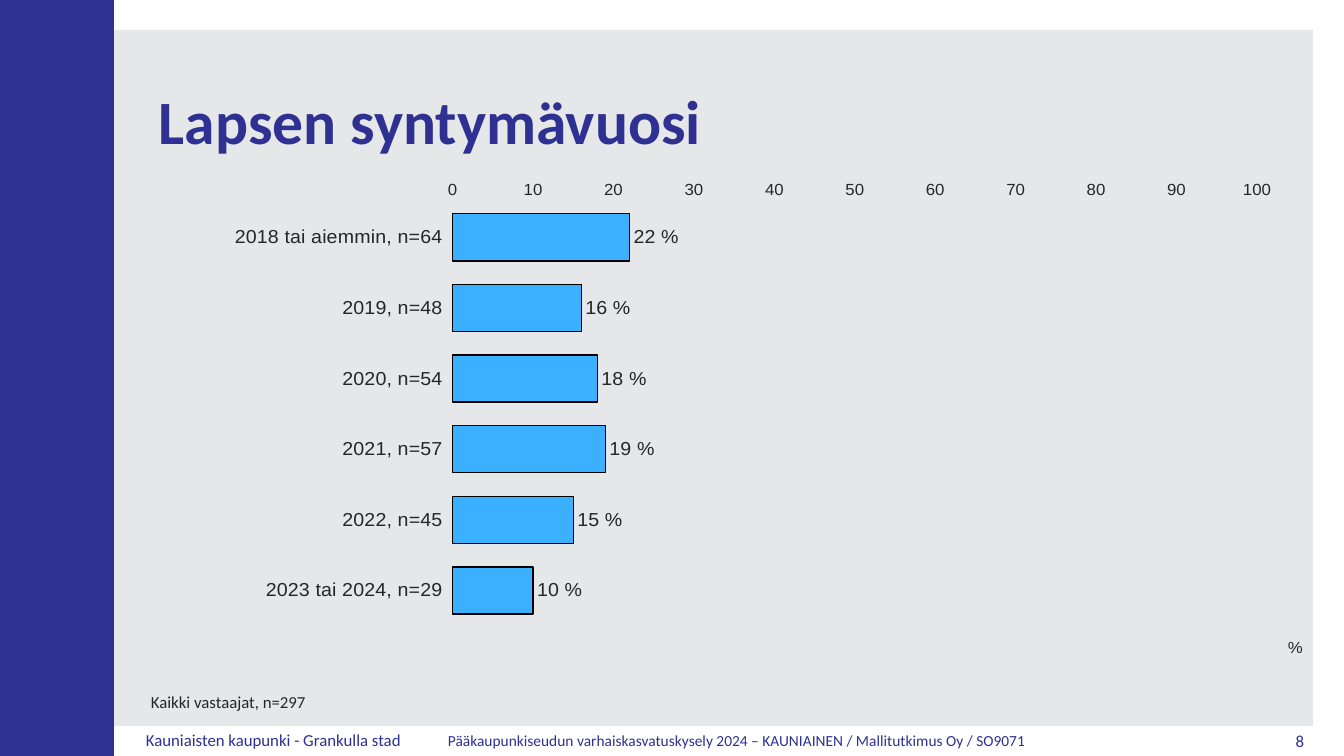
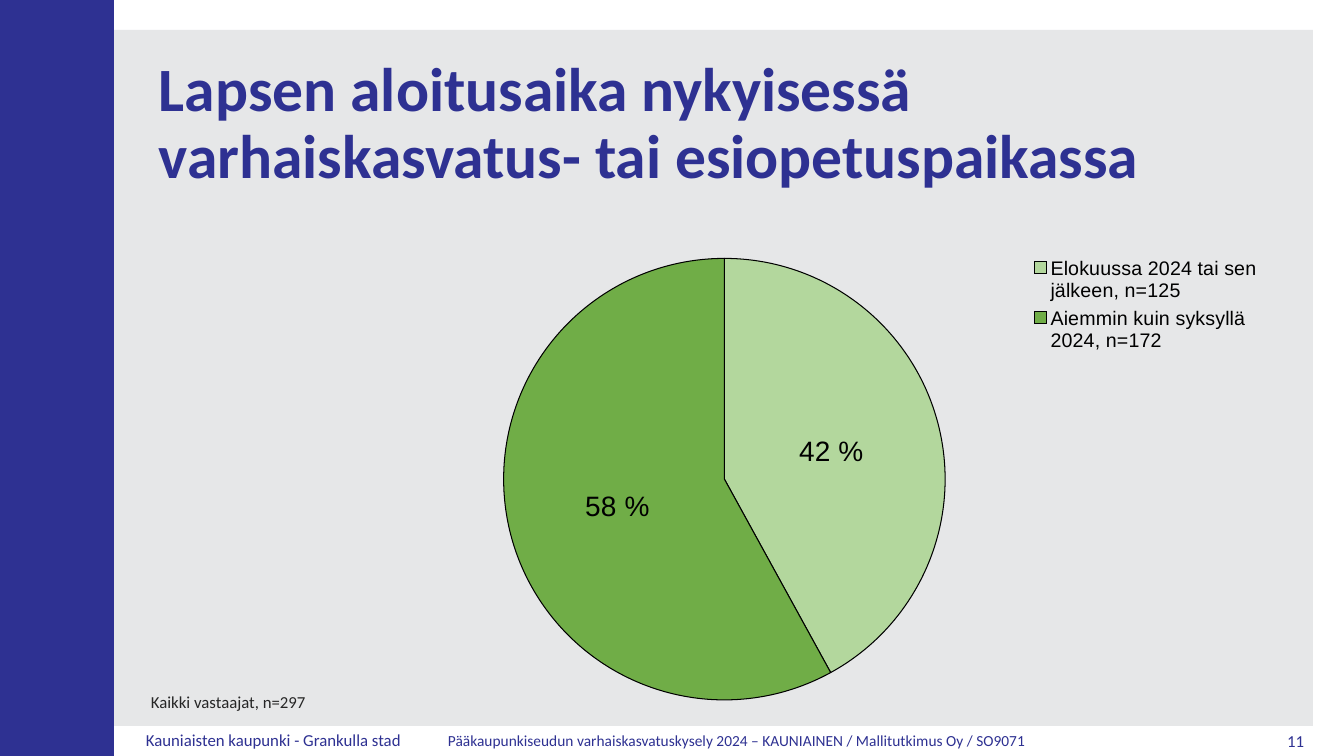
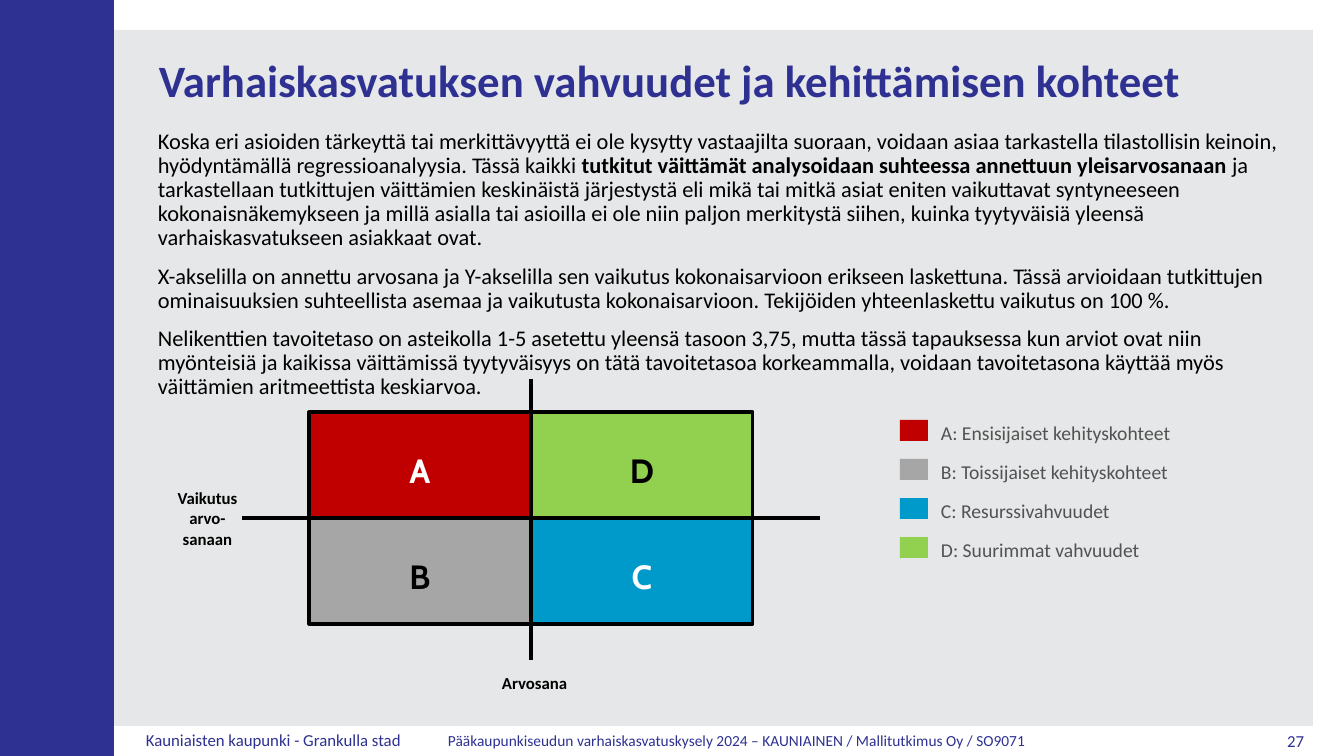
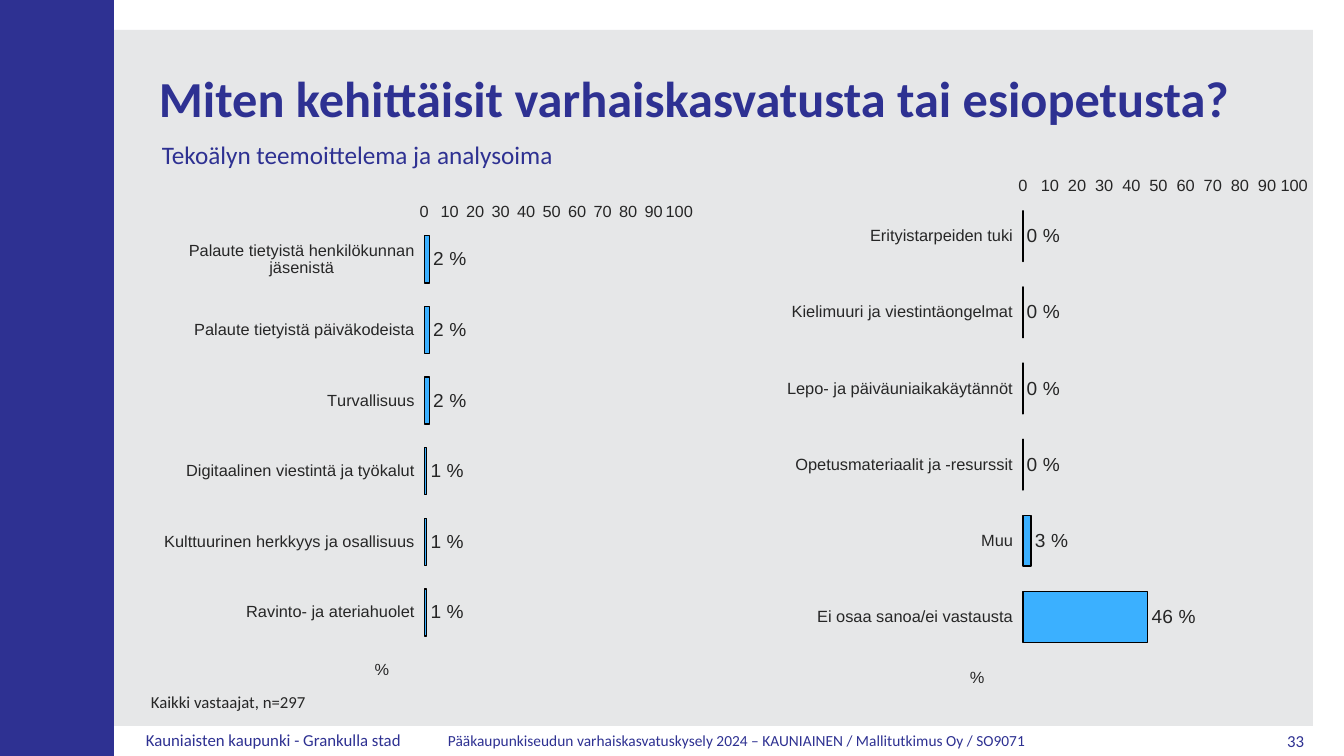
from lxml import etree
from pptx import Presentation
from pptx.chart.data import CategoryChartData
from pptx.dml.color import RGBColor
from pptx.enum.chart import (XL_CHART_TYPE, XL_LABEL_POSITION, XL_LEGEND_POSITION,
                             XL_AXIS_CROSSES, XL_TICK_LABEL_POSITION, XL_TICK_MARK)
from pptx.enum.shapes import MSO_CONNECTOR, MSO_SHAPE
from pptx.enum.text import MSO_ANCHOR, PP_ALIGN
from pptx.oxml.ns import qn
from pptx.util import Pt

EMU_PER_PX = 914400 / 100.8
SLIDE_SIZE = (1344, 756)

INDIGO = RGBColor(0x2E, 0x31, 0x92)
PANEL = RGBColor(0xE6, 0xE7, 0xE8)
BLACK = RGBColor(0, 0, 0)
WHITE = RGBColor(0xFF, 0xFF, 0xFF)
INK = RGBColor(0x26, 0x26, 0x26)
KEY_TEXT = RGBColor(0x52, 0x52, 0x52)
SKY = RGBColor(0x3B, 0xB0, 0xFF)
PALE_GREEN = RGBColor(0xB3, 0xD7, 0x9D)
GREEN = RGBColor(0x70, 0xAD, 0x47)
RED = RGBColor(0xC0, 0, 0)
GREY = RGBColor(0xA6, 0xA6, 0xA6)
BLUE = RGBColor(0, 0x9A, 0xCA)
LIME = RGBColor(0x92, 0xD0, 0x50)

RECTANGLE = MSO_SHAPE.RECTANGLE
STRAIGHT = MSO_CONNECTOR.STRAIGHT
BAR, PIE = XL_CHART_TYPE.BAR_CLUSTERED, XL_CHART_TYPE.PIE
OUTSIDE_END, CENTER_LABEL = XL_LABEL_POSITION.OUTSIDE_END, XL_LABEL_POSITION.CENTER
LEGEND_RIGHT = XL_LEGEND_POSITION.RIGHT
AXIS_MAXIMUM = XL_AXIS_CROSSES.MAXIMUM
LABELS_LOW = XL_TICK_LABEL_POSITION.LOW
NO_TICKS = XL_TICK_MARK.NONE
TOP, MIDDLE = MSO_ANCHOR.TOP, MSO_ANCHOR.MIDDLE
LEFT, CENTER, RIGHT = PP_ALIGN.LEFT, PP_ALIGN.CENTER, PP_ALIGN.RIGHT

PERCENT = '#,##0" %"'
RESPONDENTS = "Kaikki vastaajat, n=297"


def px(length):
    return round(length * EMU_PER_PX)


def place(box):
    return [px(length) for length in box]


def set_font(font, size, color, bold=False, name="Calibri"):
    values = {"size": Pt(size), "bold": bold, "name": name}
    for attribute, value in values.items():
        setattr(font, attribute, value)
    font.color.rgb = color


def write(frame, paragraphs, size, color, bold=False, name="Calibri",
          align=LEFT, anchor=TOP, spacing=None, gap=0):
    """Fill a frame; each paragraph is a list of (text, font changes)."""
    frame.word_wrap = True
    frame.vertical_anchor = anchor
    for index, runs in enumerate(paragraphs):
        paragraph = frame.add_paragraph() if index else frame.paragraphs[0]
        paragraph.alignment = align
        if spacing:
            paragraph.line_spacing = spacing
        if index and gap:
            paragraph.space_before = Pt(gap)
        for text, changes in runs:
            run = paragraph.add_run()
            run.text = text
            set_font(run.font, **{"size": size, "color": color, "bold": bold,
                                  "name": name, **changes})


def add_text(slide, box, text, size, color, **style):
    """Place a text box; text is a string or a list of paragraphs."""
    frame = slide.shapes.add_textbox(*place(box)).text_frame
    paragraphs = [[(text, {})]] if isinstance(text, str) else text
    write(frame, paragraphs, size, color, **style)
    return frame


def add_rectangle(slide, box, fill, outline=None):
    rectangle = slide.shapes.add_shape(RECTANGLE, *place(box))
    rectangle.shadow.inherit = False
    rectangle.fill.solid()
    rectangle.fill.fore_color.rgb = fill
    if outline:
        rectangle.line.color.rgb = BLACK
        rectangle.line.width = Pt(outline)
    else:
        rectangle.line.fill.background()
    return rectangle


def add_line(slide, start, end):
    line = slide.shapes.add_connector(STRAIGHT, *place(start + end))
    line.line.color.rgb = BLACK
    line.line.width = Pt(2.25)
    etree.SubElement(line.element.spPr, qn("a:effectLst"))


def add_footer(slide):
    frame = add_text(slide, (136, 729, 1088, 28), [[
        ("Kauniaisten kaupunki - Grankulla stad\t", {}),
        ("Pääkaupunkiseudun varhaiskasvatuskysely 2024 – KAUNIAINEN / "
         "Mallitutkimus Oy / SO9071", {"size": 11}),
    ]], 12, INDIGO, spacing=0.8)
    properties = frame.paragraphs[0]._p.get_or_add_pPr()
    tabs = etree.SubElement(properties, qn("a:tabLst"))
    etree.SubElement(tabs, qn("a:tab"), pos=str(px(302)), algn="l")


def add_page(deck, title, number, title_size=44, title_height=146, note=None):
    """Add a slide with the side band, panel, title, footer and page number."""
    slide = deck.slides.add_slide(deck.slide_layouts[6])
    add_rectangle(slide, (30, 30, 1283, 696), PANEL)
    add_rectangle(slide, (0, 0, 114, 756), INDIGO)
    add_footer(slide)
    add_text(slide, (149, 52, 1159, title_height), title, title_size, INDIGO,
             bold=True, anchor=MIDDLE, spacing=0.9)
    if note:
        add_text(slide, (141, 689, 925, 28), note, 12, INK, spacing=0.9)
    add_text(slide, (1239, 726, 75, 30), str(number), 12, INDIGO,
             align=RIGHT, anchor=MIDDLE)
    return slide


def set_layout(parent, index, inner=False, **fractions):
    """Give a chart part a fixed place, in fractions of the chart."""
    for old in parent.findall(qn("c:layout")):
        parent.remove(old)
    layout = etree.Element(qn("c:layout"))
    manual = etree.SubElement(layout, qn("c:manualLayout"))
    values = {"layoutTarget": "inner"} if inner else {}
    values.update(xMode="edge", yMode="edge", **fractions)
    for tag, value in values.items():
        etree.SubElement(manual, qn("c:" + tag), val=str(value))
    parent.insert(index, layout)


def add_share_chart(slide, kind, box, shares, color, plot_box, label_size, label_position):
    """Add a chart of one series of percentages, with value labels."""
    data = CategoryChartData()
    data.categories = list(shares)
    data.add_series("Series 1", list(shares.values()))
    chart = slide.shapes.add_chart(kind, *place(box), data).chart
    chart.has_title = False
    chart.has_legend = False
    set_font(chart.font, 14, color, name="Arial")
    set_layout(chart.element.chart.plotArea, 0, inner=True,
               **dict(zip("xywh", plot_box)))
    plot = chart.plots[0]
    plot.has_data_labels = True
    labels = plot.data_labels
    values = {"show_value": True, "show_percentage": False, "number_format": PERCENT,
              "number_format_is_linked": False, "position": label_position}
    for attribute, value in values.items():
        setattr(labels, attribute, value)
    set_font(labels.font, label_size, color, name="Arial")
    return chart


def paint(part, color, width):
    part.format.fill.solid()
    part.format.fill.fore_color.rgb = color
    part.format.line.color.rgb = BLACK
    part.format.line.width = Pt(width)


def add_bars(slide, box, shares, plot_box, unit_at, category_size=12):
    chart = add_share_chart(slide, BAR, box, shares, INK, plot_box, 14, OUTSIDE_END)
    plot = chart.plots[0]
    plot.vary_by_categories = False
    plot.gap_width = 50
    paint(plot.series[0], SKY, 1)

    categories, scale = chart.category_axis, chart.value_axis
    formats = {
        categories: {"reverse_order": True, "crosses": AXIS_MAXIMUM,
                     "tick_label_position": LABELS_LOW},
        scale: {"minimum_scale": 0, "maximum_scale": 100, "major_unit": 10},
    }
    for axis, size in ((categories, category_size), (scale, 12)):
        values = {"has_major_gridlines": False, "major_tick_mark": NO_TICKS,
                  "minor_tick_mark": NO_TICKS, **formats[axis]}
        for attribute, value in values.items():
            setattr(axis, attribute, value)
        axis.format.line.fill.background()
        set_font(axis.tick_labels.font, size, INK, name="Arial")

    unit = scale.axis_title
    write_unit = unit.text_frame.paragraphs[0].add_run()
    write_unit.text = "%"
    set_font(write_unit.font, 12, INK, name="Arial")
    set_layout(unit.element, 1, x=unit_at[0], y=unit_at[1])


def add_pie(slide, box, shares, colors):
    chart = add_share_chart(slide, PIE, box, shares, BLACK,
                            (0.193, 0.053, 0.607, 0.92), 20, CENTER_LABEL)
    chart.plots[0].vary_by_categories = True
    for index, color in enumerate(colors):
        paint(chart.plots[0].series[0].points[index], color, 0.75)
    chart.has_legend = True
    chart.legend.position = LEGEND_RIGHT
    chart.legend.include_in_layout = False
    set_font(chart.legend.font, 14, BLACK, name="Arial")
    set_layout(chart.element.find(".//" + qn("c:legend")), 1,
               x=0.75, y=0.04, w=0.22, h=0.22)


def add_quadrants(slide, left, top, width, height):
    """Draw the four fields with both axes and their captions."""
    middle_x, middle_y = left + width, top + height
    add_line(slide, (middle_x, top + 248), (middle_x, top - 33))
    add_line(slide, (left + 511, middle_y), (left - 67, middle_y))
    fields = [("A", RED, WHITE), ("D", LIME, BLACK),
              ("B", GREY, BLACK), ("C", BLUE, WHITE)]
    for index, (letter, fill, color) in enumerate(fields):
        row, column = divmod(index, 2)
        field = add_rectangle(slide, (left + column * width, top + row * height,
                                      width, height), fill, outline=2.25)
        field.text_frame.margin_top = px(10)
        field.text_frame.margin_bottom = 0
        write(field.text_frame, [[(letter, {})]], 24, color, bold=True,
              name="Cabin", align=CENTER, anchor=MIDDLE)
    add_text(slide, (left - 150, top + 71, 97, 72), "Vaikutus arvo-sanaan",
             12, BLACK, bold=True, align=CENTER)
    add_text(slide, (left + 183, top + 256, 260, 27), "Arvosana", 12, BLACK, bold=True)


def add_key(slide, left, top, pitch):
    entries = [("A: Ensisijaiset kehityskohteet", RED),
               ("B: Toissijaiset kehityskohteet", GREY),
               ("C: Resurssivahvuudet", BLUE),
               ("D: Suurimmat vahvuudet", LIME)]
    for index, (caption, color) in enumerate(entries):
        y = top + index * pitch
        add_rectangle(slide, (left, y + 3, 28, 21), color)
        frame = add_text(slide, (left + 33, y, 262, 32), caption, 14, KEY_TEXT)
        frame.margin_left = frame.margin_right = px(8)
        frame.margin_top = frame.margin_bottom = px(4)


def birth_year_slide(deck):
    slide = add_page(deck, "Lapsen syntymävuosi", 8, note=RESPONDENTS)
    shares = {"2018 tai aiemmin, n=64": 22, "2019, n=48": 16, "2020, n=54": 18,
              "2021, n=57": 19, "2022, n=45": 15, "2023 tai 2024, n=29": 10}
    add_bars(slide, (149, 181, 1159, 480), shares, (0.262, 0.012, 0.694, 0.92),
             (0.98, 0.95), category_size=14)


def start_time_slide(deck):
    slide = add_page(deck, "Lapsen aloitusaika nykyisessä varhaiskasvatus- "
                     "tai esiopetuspaikassa", 11, note=RESPONDENTS)
    shares = {"Elokuussa 2024 tai sen jälkeen, n=125": 42,
              "Aiemmin kuin syksyllä 2024, n=172": 58}
    add_pie(slide, (149, 233, 1159, 480), shares, (PALE_GREEN, GREEN))


def strengths_slide(deck):
    slide = add_page(deck, "Varhaiskasvatuksen vahvuudet ja kehittämisen kohteet", 27,
                     title_size=32, title_height=63)
    method = [
        [("Koska eri asioiden tärkeyttä tai merkittävyyttä ei ole kysytty vastaajilta "
          "suoraan, voidaan asiaa tarkastella tilastollisin keinoin, hyödyntämällä "
          "regressioanalyysia. Tässä kaikki ", {}),
         ("tutkitut väittämät analysoidaan suhteessa annettuun yleisarvosanaan ",
          {"bold": True}),
         ("ja tarkastellaan tutkittujen väittämien keskinäistä järjestystä eli mikä tai "
          "mitkä asiat eniten vaikuttavat syntyneeseen kokonaisnäkemykseen ja millä "
          "asialla tai asioilla ei ole niin paljon merkitystä siihen, kuinka tyytyväisiä "
          "yleensä varhaiskasvatukseen asiakkaat ovat.", {})],
        [("X-akselilla on annettu arvosana ja Y-akselilla sen vaikutus kokonaisarvioon "
          "erikseen laskettuna. Tässä arvioidaan tutkittujen ominaisuuksien suhteellista "
          "asemaa ja vaikutusta kokonaisarvioon. Tekijöiden yhteenlaskettu vaikutus on "
          "100 %.", {})],
        [("Nelikenttien tavoitetaso on asteikolla 1-5 asetettu yleensä tasoon 3,75, mutta "
          "tässä tapauksessa kun arviot ovat niin myönteisiä ja kaikissa väittämissä "
          "tyytyväisyys on tätä tavoitetasoa korkeammalla, voidaan tavoitetasona käyttää "
          "myös väittämien aritmeettista keskiarvoa.", {})],
    ]
    add_text(slide, (148, 125, 1159, 480), method, 16, BLACK, spacing=0.9, gap=10)
    add_quadrants(slide, 309, 412, 222, 106)
    add_key(slide, 900, 417, 39)


def development_slide(deck):
    slide = add_page(deck, "Miten kehittäisit varhaiskasvatusta tai esiopetusta?", 33,
                     title_size=36, title_height=98, note=RESPONDENTS)
    add_text(slide, (152, 134, 1026, 40), "Tekoälyn teemoittelema ja analysoima",
             18, INDIGO)
    themes = {"Palaute tietyistä henkilökunnan jäsenistä": 2,
              "Palaute tietyistä päiväkodeista": 2,
              "Turvallisuus": 2,
              "Digitaalinen viestintä ja työkalut": 1,
              "Kulttuurinen herkkyys ja osallisuus": 1,
              "Ravinto- ja ateriahuolet": 1}
    more_themes = {"Erityistarpeiden tuki": 0,
                   "Kielimuuri ja viestintäongelmat": 0,
                   "Lepo- ja päiväuniaikakäytännöt": 0,
                   "Opetusmateriaalit ja -resurssit": 0,
                   "Muu": 3,
                   "Ei osaa sanoa/ei vastausta": 46}
    for box, shares in (((149, 203, 544, 480), themes),
                        ((730, 177, 578, 514), more_themes)):
        add_bars(slide, box, shares, (0.569, 0.012, 0.481, 0.92), (0.42, 0.95))


def main():
    deck = Presentation()
    deck.slide_width, deck.slide_height = place(SLIDE_SIZE)
    for build in (birth_year_slide, start_time_slide, strengths_slide, development_slide):
        build(deck)
    deck.save("out.pptx")


if __name__ == "__main__":
    main()
